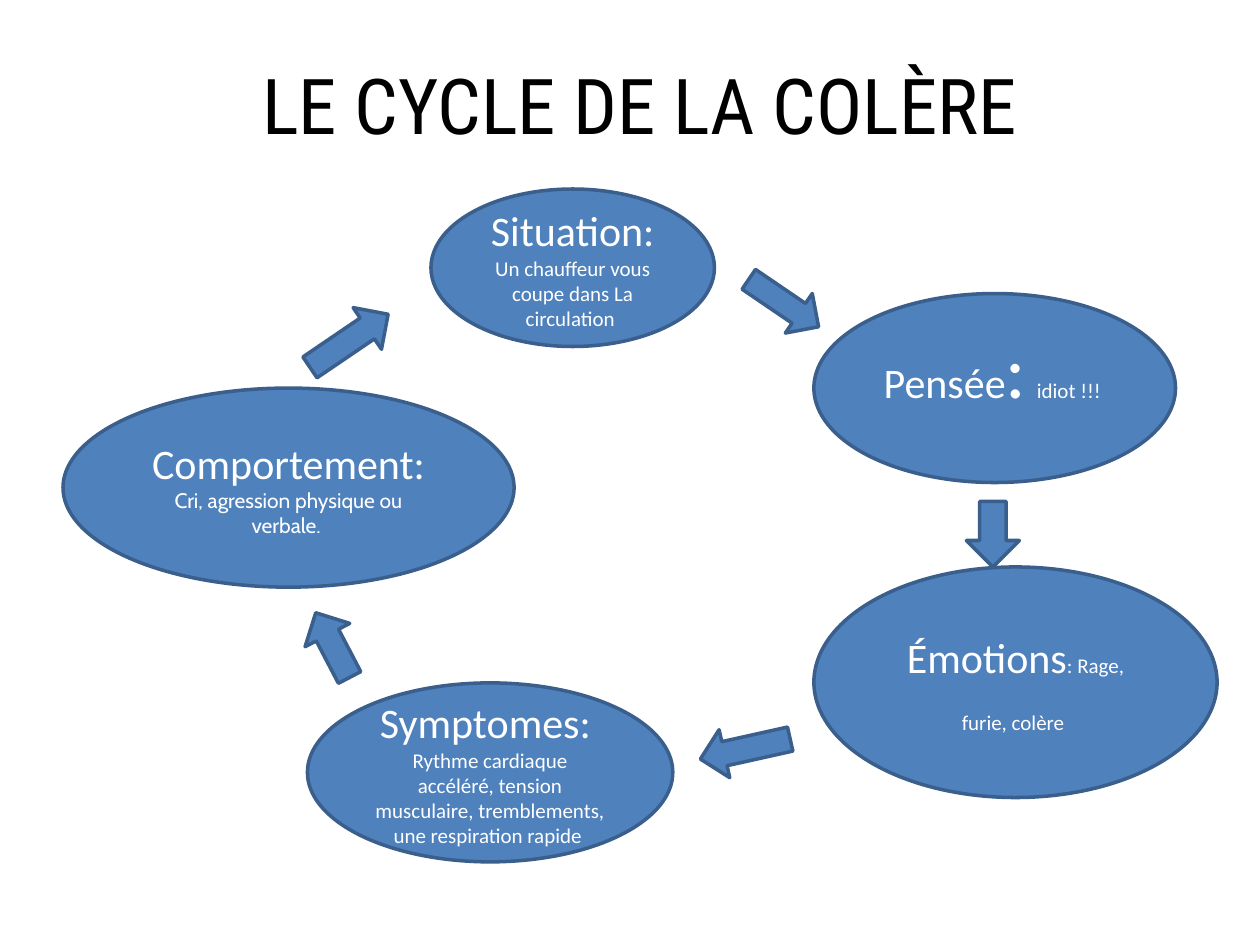
from dataclasses import dataclass

from pptx import Presentation
from pptx.dml.color import RGBColor
from pptx.enum.shapes import MSO_SHAPE
from pptx.enum.text import MSO_ANCHOR, PP_ALIGN
from pptx.util import Emu, Pt

ELLIPSE, ARROW = MSO_SHAPE.OVAL, MSO_SHAPE.DOWN_ARROW
MIDDLE, CENTER = MSO_ANCHOR.MIDDLE, PP_ALIGN.CENTER
PX = 9144


@dataclass(frozen=True)
class Theme:
    fill: RGBColor = RGBColor(0x4F, 0x81, 0xBD)
    line: RGBColor = RGBColor(0x3A, 0x5F, 0x8C)
    light: RGBColor = RGBColor(0xFF, 0xFF, 0xFF)
    dark: RGBColor = RGBColor(0, 0, 0)
    title_font: str = "Roboto Condensed"
    font: str = "Calibri"
    accent_font: str = "Cabin"
    space_font: str = "Times New Roman"
    large: int = 44
    head: int = 24
    body: int = 12
    outline: int = 2
    leading: int = 30


THEME = Theme()


@dataclass(frozen=True)
class Box:
    x: int
    y: int
    w: int
    h: int

    def emu(self) -> list[Emu]:
        return [Emu(v * PX) for v in (self.x, self.y, self.w, self.h)]


@dataclass(frozen=True)
class Run:
    text: str
    size: int = THEME.body
    font: str = THEME.font


@dataclass(frozen=True)
class Stage:
    box: Box
    paragraphs: list[list[Run]]
    leading: int | None = None


@dataclass(frozen=True)
class Arrow:
    box: Box
    rotation: float = 0


def head(text: str) -> Run:
    return Run(text, THEME.head)


TITLE = Box(108, 47, 800, 70)
STAGES = [
    Stage(Box(342, 150, 225, 125),
          [[head("Situation: "), Run("Un chauffeur vous coupe dans La circulation ")]]),
    Stage(Box(646, 233, 287, 150),
          [[head("Pensée"), Run(":", THEME.large),
            Run(" ", THEME.head, THEME.space_font), Run("idiot !!! ")]],
          THEME.leading),
    Stage(Box(646, 450, 320, 183),
          [[head("Émotions"), Run(": Rage, furie, colère ")]], THEME.leading),
    Stage(Box(244, 542, 290, 142),
          [[head("Symptomes: ")],
           [Run("Rythme cardiaque accéléré, tension musculaire, "
                "tremblements, une respiration rapide ")]]),
    Stage(Box(50, 308, 358, 158),
          [[head("Comportement: "),
            Run("Cri, agression physique ou verbale. ", font=THEME.accent_font)]]),
]
ARROWS = [
    Arrow(Box(767, 398, 42, 52)),
    Arrow(Box(603, 207, 38, 67), 304.2),
    Arrow(Box(572, 558, 39, 73), 77.5),
    Arrow(Box(244, 483, 40, 58), 152.4),
    Arrow(Box(257, 233, 40, 75), 235.8),
]


def apply(target, values: dict) -> None:
    for name, value in values.items():
        setattr(target, name, value)


def write(sp, paragraphs: list[list[Run]], color: RGBColor,
          leading: int | None = None) -> None:
    tf = sp.text_frame
    apply(tf, {"word_wrap": True, "vertical_anchor": MIDDLE})
    for i, runs in enumerate(paragraphs):
        p = tf.add_paragraph() if i else tf.paragraphs[0]
        p.alignment = CENTER
        if leading:
            p.line_spacing = Pt(leading)
        for run in runs:
            r = p.add_run()
            r.text = run.text
            apply(r.font, {"size": Pt(run.size), "name": run.font})
            r.font.color.rgb = color


def add_shape(slide, kind, box: Box):
    sp = slide.shapes.add_shape(kind, *box.emu())
    sp.shadow.inherit = False
    sp.fill.solid()
    sp.fill.fore_color.rgb = THEME.fill
    sp.line.color.rgb = THEME.line
    sp.line.width = Pt(THEME.outline)
    return sp


def add_stage(slide, stage: Stage) -> None:
    sp = add_shape(slide, ELLIPSE, stage.box)
    write(sp, stage.paragraphs, THEME.light, stage.leading)


def add_arrow(slide, arrow: Arrow) -> None:
    add_shape(slide, ARROW, arrow.box).rotation = arrow.rotation


def main() -> None:
    prs = Presentation()
    apply(prs, {"slide_width": Emu(1000 * PX), "slide_height": Emu(750 * PX)})
    slide = prs.slides.add_slide(prs.slide_layouts[6])
    title = slide.shapes.add_textbox(*TITLE.emu())
    write(title, [[Run("LE CYCLE DE LA COLÈRE", THEME.large, THEME.title_font)]],
          THEME.dark)
    for stage in STAGES:
        add_stage(slide, stage)
    for arrow in ARROWS:
        add_arrow(slide, arrow)
    prs.save("out.pptx")


if __name__ == "__main__":
    main()
